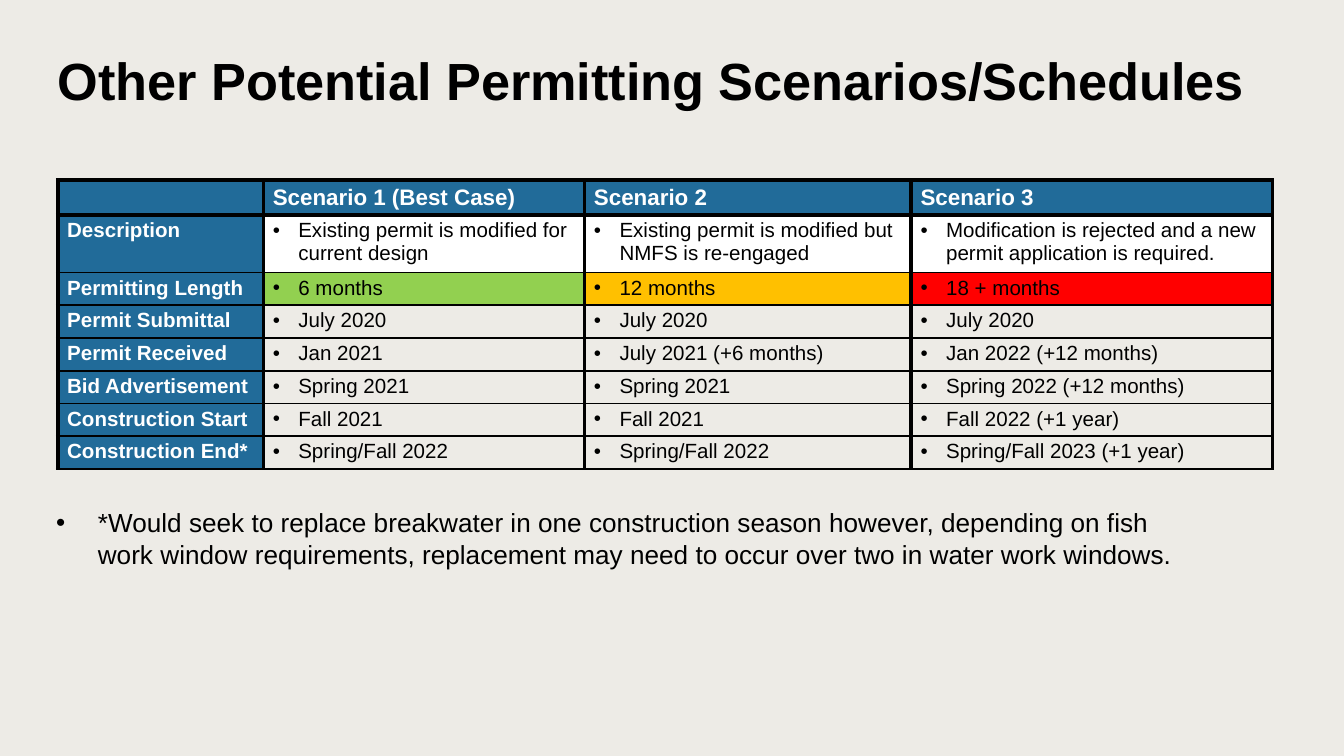
from typing import NamedTuple, Optional

from lxml.etree import SubElement
from pptx import Presentation
from pptx.dml.color import RGBColor as Rgb
from pptx.enum.text import MSO_ANCHOR as Anchor
from pptx.oxml.ns import qn
from pptx.util import Inches, Pt

COLORS = {
    "background": "EDEBE6", "black": "000000", "white": "FFFFFF", "blue": "216B99",
    "green": "92D050", "amber": "FFC000", "red": "FF0000",
}
FONT = "Arial"
THICK, THIN = 2.25, 1
SLIDE_WIDTH = 10
COLUMN_WIDTHS = (1.53, 2.39, 2.43, 2.69)


class Row(NamedTuple):
    """One schedule row: its label, its entries and the fills of the entries."""
    label: str
    entries: tuple
    fills: tuple = (None, None, None)
    height: float = 0.24


ROWS = (
    Row("", ("Scenario 1 (Best Case)", "Scenario 2", "Scenario 3"), ("blue",) * 3, 0.25),
    Row("Description", (
        "Existing permit is modified for current design",
        "Existing permit is modified but NMFS is re-engaged",
        "Modification is rejected and a new permit application is required.",
    ), ("white",) * 3, 0.42),
    Row("Permitting Length", ("6 months", "12 months", "18 + months"), ("green", "amber", "red")),
    Row("Permit Submittal", ("July 2020",) * 3),
    Row("Permit Received", ("Jan 2021", "July 2021 (+6 months)", "Jan 2022 (+12 months)")),
    Row("Bid Advertisement", ("Spring 2021", "Spring 2021", "Spring 2022 (+12 months)")),
    Row("Construction Start", ("Fall 2021", "Fall 2021", "Fall 2022 (+1 year)")),
    Row("Construction End*", ("Spring/Fall 2022", "Spring/Fall 2022", "Spring/Fall 2023 (+1 year)")),
)


def write_text(frame, text: str, *, size: float, color: str = "black", bold: bool = False,
               indent: float = 0, line_spacing: Optional[float] = None) -> None:
    """Write one formatted paragraph, with a bullet when it is indented."""
    paragraph = frame.paragraphs[0]
    if line_spacing:
        paragraph.line_spacing = line_spacing
    if indent:
        properties = paragraph._p.get_or_add_pPr()
        properties.set("marL", str(Inches(indent)))
        properties.set("indent", str(-Inches(indent)))
        SubElement(properties, qn("a:buFont"), typeface=FONT)
        SubElement(properties, qn("a:buChar"), char="•")
    if not text:
        SubElement(paragraph._p, qn("a:endParaRPr"), sz=str(int(size * 100)))
        return
    run = paragraph.add_run()
    run.text = text
    run.font.name, run.font.size, run.font.bold = FONT, Pt(size), bold
    run.font.color.rgb = Rgb.from_string(COLORS[color])


def add_text_box(slide, left: float, top: float, width: float, height: float,
                 text: str, inset: Optional[float] = None, **text_format) -> None:
    """Add a wrapping text box."""
    frame = slide.shapes.add_textbox(*map(Inches, (left, top, width, height))).text_frame
    frame.word_wrap = True
    if inset is not None:
        frame.margin_left = frame.margin_right = Inches(inset)
        frame.margin_top = frame.margin_bottom = Inches(inset)
    write_text(frame, text, **text_format)


def set_borders(cell, top: float, bottom: float) -> None:
    """Draw thick sides and the given top and bottom lines around a cell."""
    properties = cell._tc.get_or_add_tcPr()
    for side, width in (("L", THICK), ("R", THICK), ("T", top), ("B", bottom)):
        line = SubElement(properties, qn(f"a:ln{side}"), w=str(Pt(width)))
        SubElement(SubElement(line, qn("a:solidFill")), qn("a:srgbClr"), val=COLORS["black"])


def fill_cell(cell, text: str, fill: Optional[str], row_index: int, is_label: bool) -> None:
    """Format one table cell and write its text."""
    is_header = row_index == 0
    cell.margin_left = cell.margin_right = Inches(0.07)
    cell.margin_top = cell.margin_bottom = Inches(0.03)
    cell.vertical_anchor = Anchor.MIDDLE if is_header else Anchor.TOP
    set_borders(cell, THICK if row_index <= 1 else THIN, THICK if is_header else THIN)
    if fill:
        cell.fill.solid()
        cell.fill.fore_color.rgb = Rgb.from_string(COLORS[fill])
    else:
        cell.fill.background()
    strong = is_header or is_label
    write_text(cell.text_frame, text, size=12 if is_header else 11, bold=strong,
               color="white" if strong else "black", indent=0 if strong else 0.19)


def add_schedule(slide, left: float, top: float) -> None:
    """Add the table that compares the permitting scenarios."""
    height = sum(row.height for row in ROWS)
    table = slide.shapes.add_table(
        len(ROWS), len(COLUMN_WIDTHS),
        *map(Inches, (left, top, sum(COLUMN_WIDTHS), height))).table
    table.first_row = table.horz_banding = False
    for column, width in zip(table.columns, COLUMN_WIDTHS):
        column.width = Inches(width)
    for row_index, row in enumerate(ROWS):
        table.rows[row_index].height = Inches(row.height)
        contents = zip((row.label, *row.entries), ("blue", *row.fills))
        for column_index, (text, fill) in enumerate(contents):
            fill_cell(table.cell(row_index, column_index), text, fill, row_index, column_index == 0)


def main() -> None:
    """Build the permitting scenarios slide."""
    presentation = Presentation()
    presentation.slide_width = Inches(SLIDE_WIDTH)
    presentation.slide_height = Inches(SLIDE_WIDTH * 9 / 16)
    slide = presentation.slides.add_slide(presentation.slide_layouts[6])
    slide.background.fill.solid()
    slide.background.fill.fore_color.rgb = Rgb.from_string(COLORS["background"])
    add_text_box(slide, 0.43, 0.45, 9.14, 0.28, "Other Potential Permitting Scenarios/Schedules",
                 inset=0, size=28, bold=True, line_spacing=0.8)
    add_schedule(slide, 0.43, 1.34)
    add_text_box(slide, 0.32, 3.72, 8.76, 0.57,
                 "*Would seek to replace breakwater in one construction season however, depending on fish "
                 "work window requirements, replacement may need to occur over two in water work windows.",
                 size=14, indent=0.31)
    presentation.save("out.pptx")


if __name__ == "__main__":
    main()
